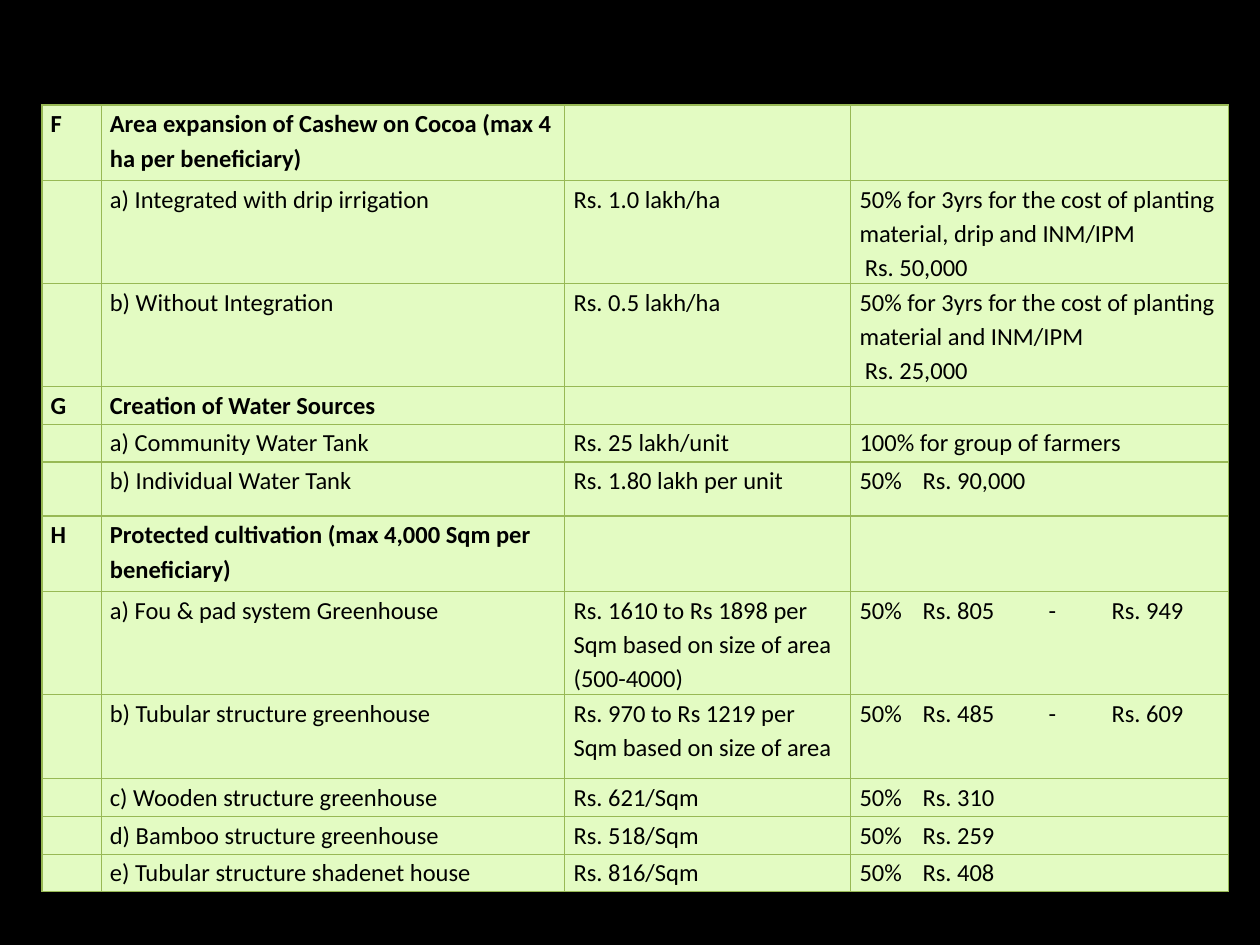
from lxml import etree
from pptx import Presentation
from pptx.dml.color import RGBColor
from pptx.oxml.ns import qn
from pptx.util import Pt

THEME = {
    "background": "000000",
    "cell": "E3FBC2",
    "border": "98B955",
    "text": "000000",
    "font": "Calibri",
    "size": 14,
}
COLUMNS = [33.8, 265, 163.4, 216]
LINE_HEIGHTS = {1: 21.6, 2: 43.2, 3: 58.8}
TAB_STOPS = {"wide": [37, 84.5, 95], "narrow": [40]}
CELL_FORMAT = {"margin_left": Pt(5), "margin_right": Pt(5), "margin_top": 0, "margin_bottom": 0}
FONT_FORMAT = {"name": THEME["font"], "size": Pt(THEME["size"])}

ROWS = [
    (LINE_HEIGHTS[2], ["F", "Area expansion of Cashew on Cocoa (max 4 ha per beneficiary)", "", ""]),
    (LINE_HEIGHTS[3], ["", "a) Integrated with drip irrigation", "Rs. 1.0 lakh/ha",
                       "50% for 3yrs for the cost of planting material, drip and INM/IPM\nRs. 50,000"]),
    (LINE_HEIGHTS[3], ["", "b) Without Integration", "Rs. 0.5 lakh/ha",
                       "50% for 3yrs for the cost of planting material and INM/IPM\nRs. 25,000"]),
    (LINE_HEIGHTS[1], ["G", "Creation of Water Sources", "", ""]),
    (LINE_HEIGHTS[1], ["", "a) Community Water Tank", "Rs. 25 lakh/unit", "100% for group of farmers"]),
    (30.9, ["", "b) Individual Water Tank", "Rs. 1.80 lakh per unit", "50%\tRs. 90,000"]),
    (LINE_HEIGHTS[2], ["H", "Protected cultivation (max 4,000 Sqm per beneficiary)", "", ""]),
    (LINE_HEIGHTS[3], ["", "a) Fou & pad system Greenhouse",
                       "Rs. 1610 to Rs 1898 per Sqm based on size of area (500-4000)",
                       "50%\tRs. 805\t-\tRs. 949"]),
    (48, ["", "b) Tubular structure greenhouse", "Rs. 970 to Rs 1219 per Sqm based on size of area",
          "50%\tRs. 485\t-\tRs. 609"]),
    (LINE_HEIGHTS[1], ["", "c) Wooden structure greenhouse", "Rs. 621/Sqm", "50%\tRs. 310"]),
    (LINE_HEIGHTS[1], ["", "d) Bamboo structure greenhouse", "Rs. 518/Sqm", "50%\tRs. 259"]),
    (LINE_HEIGHTS[1], ["", "e) Tubular structure shadenet house", "Rs. 816/Sqm", "50%\tRs. 408"]),
]


def add_borders(cell):
    tc_pr = cell._tc.get_or_add_tcPr()
    for i, side in enumerate(["lnL", "lnR", "lnT", "lnB"]):
        ln = etree.Element(qn(f"a:{side}"), w=str(Pt(0.75)))
        fill = etree.SubElement(ln, qn("a:solidFill"))
        etree.SubElement(fill, qn("a:srgbClr"), val=THEME["border"])
        tc_pr.insert(i, ln)


def write_paragraph(p, line, bold, indent, stops):
    p.line_spacing = 1.15
    p_pr = p._p.get_or_add_pPr()
    p_pr.set("marL", str(Pt(indent)))
    p_pr.set("indent", "0")
    if "\t" in line:
        tabs = etree.SubElement(p_pr, qn("a:tabLst"))
        for stop in stops:
            etree.SubElement(tabs, qn("a:tab"), pos=str(Pt(stop)), algn="l")
    if line:
        r = p.add_run()
        r.text = line
        r.font.bold = bold
        r.font.color.rgb = RGBColor.from_string(THEME["text"])
        for name, value in FONT_FORMAT.items():
            setattr(r.font, name, value)
    else:
        etree.SubElement(p._p, qn("a:endParaRPr"), sz=str(THEME["size"] * 100))


prs = Presentation()
prs.slide_width, prs.slide_height = Pt(720), Pt(540)
s = prs.slides.add_slide(prs.slide_layouts[6])
s.background.fill.solid()
s.background.fill.fore_color.rgb = RGBColor.from_string(THEME["background"])

height = sum(row_height for row_height, _ in ROWS)
table = s.shapes.add_table(len(ROWS), len(COLUMNS), Pt(24), Pt(60), Pt(sum(COLUMNS)), Pt(height)).table
table.first_row = table.horz_banding = False
for column, width in zip(table.columns, COLUMNS):
    column.width = Pt(width)

for row, (row_height, texts) in zip(table.rows, ROWS):
    row.height = Pt(row_height)
    for cell, content in zip(row.cells, texts):
        for name, value in CELL_FORMAT.items():
            setattr(cell, name, value)
        cell.fill.solid()
        cell.fill.fore_color.rgb = RGBColor.from_string(THEME["cell"])
        add_borders(cell)
        tf = cell.text_frame
        stops = TAB_STOPS["narrow" if texts[2].endswith("/Sqm") else "wide"]
        for i, line in enumerate(content.split("\n")):
            p = tf.add_paragraph() if i else tf.paragraphs[0]
            write_paragraph(p, line, bool(texts[0]), 3 * i, stops)

prs.save("out.pptx")
